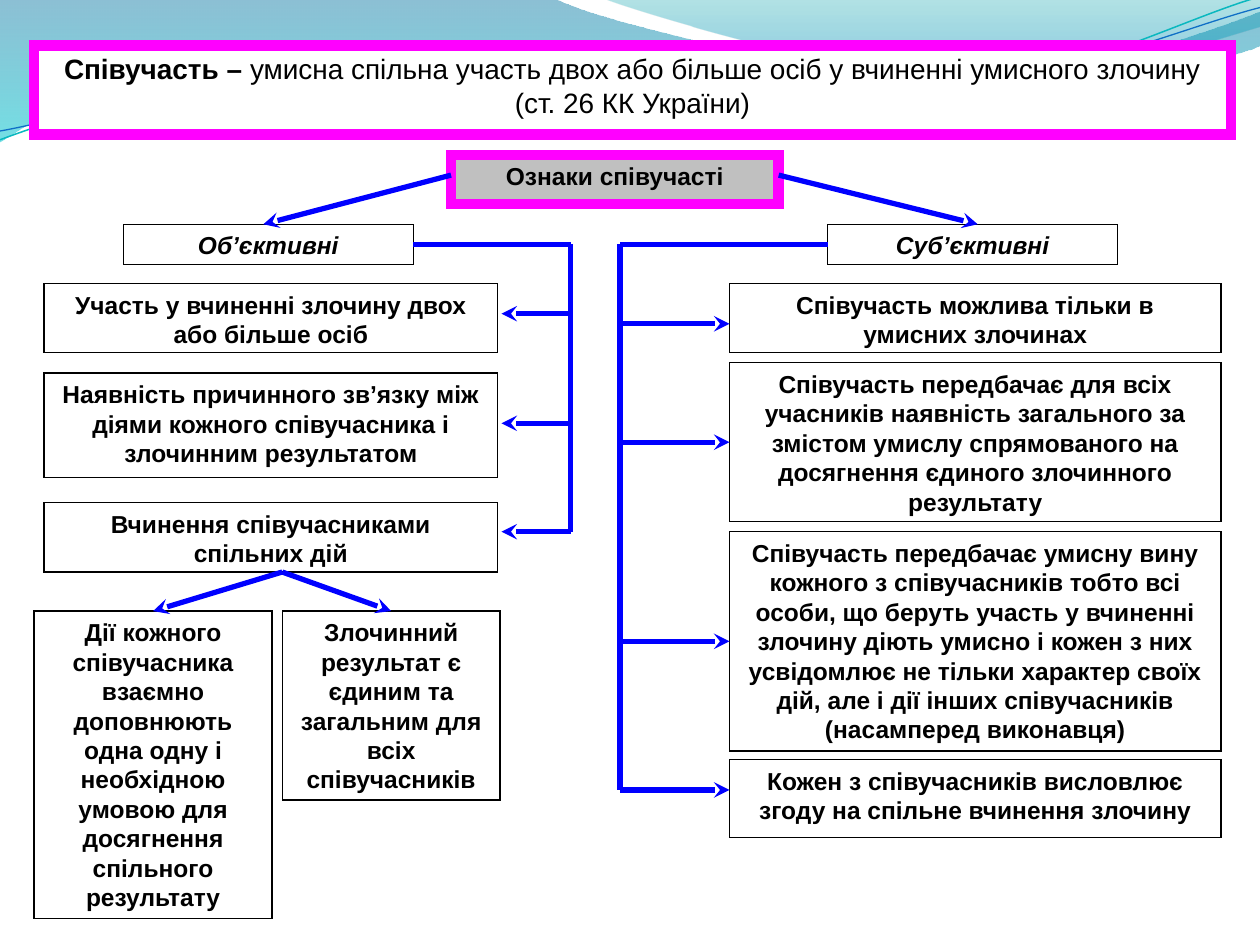
from dataclasses import dataclass
from typing import NamedTuple

from lxml import etree
from pptx import Presentation
from pptx.dml.color import RGBColor
from pptx.enum.shapes import MSO_CONNECTOR, MSO_SHAPE
from pptx.enum.text import MSO_ANCHOR, MSO_AUTO_SIZE, PP_ALIGN
from pptx.oxml.ns import qn
from pptx.util import Inches, Pt

RECTANGLE = MSO_SHAPE.RECTANGLE
STRAIGHT = MSO_CONNECTOR.STRAIGHT
CENTER = PP_ALIGN.CENTER
TOP_ANCHOR = MSO_ANCHOR.TOP
NO_AUTOFIT = MSO_AUTO_SIZE.NONE
TOP, LEFT, BOTTOM, RIGHT = range(4)


@dataclass(frozen=True)
class Theme:
    font: str = "Arial"
    title_size: float = 16
    body_size: float = 14
    thin: float = 0.75
    connector_width: float = 3
    frame_width: float = 6
    text: str = "000000"
    paper: str = "FFFFFF"
    header: str = "C0C0C0"
    frame: str = "FF00FF"
    arrow: str = "0000FF"


class Box(NamedTuple):
    left: float
    top: float
    width: float
    height: float
    text: str
    italic: bool = False
    fill: str = Theme.paper
    line: str = Theme.text
    line_width: float = Theme.thin


class Point(NamedTuple):
    x: float
    y: float


class Joint(NamedTuple):
    shape: object
    site: int


class Stop(NamedTuple):
    position: float
    color: str
    opacity: int


class Wave(NamedTuple):
    segments: list
    stops: tuple = ()
    line: str = ""
    line_width: float = Theme.thin


WAVES = [
    Wave([(0, 0), (4.4, -0.01), (4.76, 0.17, 6.64, 0.63, 7.58, 0.63),
          (8.53, 0.63, 9.58, 0.26, 10, 0.09), (10.01, 0.36),
          (9.83, 0.44, 8.7, 0.76, 7.46, 0.75), (6.22, 0.75, 3.82, 0.28, 2.57, 0.34),
          (1.29, 0.36, 0.46, 0.83, -0.01, 1.13)],
         (Stop(0, "0074A1", 45), Stop(1, "00C6CF", 55))),
    Wave([(4.79, -0.01), (5.09, 0.11, 6.82, 0.62, 7.69, 0.65),
          (8.56, 0.69, 9.61, 0.32, 10, 0.21), (10, 0)],
         (Stop(0, "00A1A9", 30), Stop(0.8, "008BBF", 45))),
    Wave([(0, 1.11), (0.48, 0.93, 1.58, 0.57, 2.77, 0.52),
          (3.95, 0.47, 5.93, 0.89, 7.13, 0.8), (8.33, 0.71, 9.38, 0.15, 9.98, -0.02)],
         line="0AB8BF", line_width=0.85),
    Wave([(0, 1.04), (0.47, 0.96, 1.64, 0.61, 2.83, 0.56),
          (4.03, 0.51, 5.97, 0.84, 7.17, 0.75), (8.36, 0.67, 9.41, 0.21, 10, 0.06)],
         line="0F6FC6"),
]
HEADER = Box(3.58, 1.23, 2.6, 0.39, "Ознаки співучасті", fill=Theme.header,
             line=Theme.frame, line_width=Theme.frame_width)
OBJECTIVE = Box(0.98, 1.78, 2.3, 0.32, "Об’єктивні", italic=True)
SUBJECTIVE = Box(6.57, 1.78, 2.3, 0.32, "Суб’єктивні", italic=True)
OBJECTIVE_SIGNS = [Box(0.35, top, 3.6, height, text) for top, height, text in (
    (2.25, 0.55, "Участь у вчиненні злочину двох або більше осіб"),
    (2.96, 0.83, "Наявність причинного зв’язку між діями кожного співучасника "
                 "і злочинним результатом"),
    (3.99, 0.55, "Вчинення співучасниками спільних дій"),
)]
SUBJECTIVE_SIGNS = [Box(5.79, top, 3.9, height, text) for top, height, text in (
    (2.25, 0.55, "Співучасть можлива тільки в умисних злочинах"),
    (2.88, 1.26, "Співучасть передбачає для всіх учасників наявність загального "
                 "за змістом умислу спрямованого на досягнення єдиного злочинного результату"),
    (4.22, 1.74, "Співучасть передбачає умисну вину кожного з співучасників тобто всі "
                 "особи, що беруть участь у вчиненні злочину діють умисно і кожен з них "
                 "усвідомлює не тільки характер своїх дій, але і дії інших співучасників "
                 "(насамперед виконавця)"),
    (6.03, 0.62, "Кожен з співучасників висловлює згоду на спільне вчинення злочину"),
)]
JOINT_ACTIONS = [
    Box(0.27, 4.85, 1.89, 2.44, "Дії кожного співучасника взаємно доповнюють одна одну "
                                "і необхідною умовою для досягнення спільного результату"),
    Box(2.24, 4.85, 1.73, 1.5, "Злочинний результат є єдиним та загальним для всіх співучасників"),
]


def bend_segments(shape, segments: list) -> None:
    outline = next(shape._element.iter(qn("a:lnTo"))).getparent()
    corners = iter(outline.findall(qn("a:lnTo")))
    for segment in segments[1:]:
        corner = next(corners)
        if len(segment) == 2:
            continue
        corner.tag = qn("a:cubicBezTo")
        for _ in range(2):
            control = next(corners)
            corner.append(control[0])
            outline.remove(control)


def draw_wave(slide, wave: Wave) -> None:
    points = [(Inches(x), Inches(y)) for segment in wave.segments
              for x, y in zip(segment[::2], segment[1::2])]
    builder = slide.shapes.build_freeform(*points[0])
    builder.add_line_segments(points[1:], close=bool(wave.stops))
    shape = builder.convert_to_shape()
    bend_segments(shape, wave.segments)
    shape.shadow.inherit = False
    if not wave.stops:
        shape.fill.background()
        set_line(shape, wave.line, wave.line_width)
        return
    shape.line.fill.background()
    shape.fill.gradient()
    shape.fill.gradient_angle = 270
    for gradient_stop, stop in zip(shape.fill.gradient_stops, wave.stops):
        gradient_stop.position = stop.position
        gradient_stop.color.rgb = RGBColor.from_string(stop.color)
    for color, stop in zip(shape._element.spPr.iter(qn("a:srgbClr")), wave.stops):
        etree.SubElement(color, qn("a:alpha"), val=str(stop.opacity * 1000))


def set_line(shape, color: str, width: float) -> None:
    shape.line.color.rgb = RGBColor.from_string(color)
    shape.line.width = Pt(width)
    outline = shape._element.spPr.find(qn("a:ln"))
    etree.SubElement(outline, qn("a:miter"), lim="800000")


def format_box(shape, fill: str, line: str, line_width: float, size: float):
    shape.fill.solid()
    shape.fill.fore_color.rgb = RGBColor.from_string(fill)
    set_line(shape, line, line_width)
    frame = shape.text_frame
    frame.word_wrap = True
    frame.auto_size = NO_AUTOFIT
    frame.vertical_anchor = TOP_ANCHOR
    paragraph = frame.paragraphs[0]
    paragraph.alignment = CENTER
    paragraph.font.name = Theme.font
    paragraph.font.size = Pt(size)
    paragraph.font.color.rgb = RGBColor.from_string(Theme.text)
    return paragraph


def draw_box(slide, box: Box):
    shape = slide.shapes.add_shape(RECTANGLE, *map(Inches, box[:4]))
    shape.shadow.inherit = False
    paragraph = format_box(shape, box.fill, box.line, box.line_width, Theme.body_size)
    paragraph.text = box.text
    paragraph.font.bold = True
    paragraph.font.italic = box.italic
    return shape


def draw_title(slide) -> None:
    title = slide.shapes.title
    title.left, title.top, title.width, title.height = map(Inches, (0.27, 0.36, 9.5, 0.71))
    paragraph = format_box(title, Theme.paper, Theme.frame, Theme.frame_width, Theme.title_size)
    for text, bold in (("Співучасть – ", True),
                       ("умисна спільна участь двох або більше осіб у вчиненні "
                        "умисного злочину (ст. 26 КК України)", False)):
        run = paragraph.add_run()
        run.text = text
        run.font.bold = bold
    slide.shapes._spTree.append(title._element)


def draw_connector(slide, start: Point | Joint, end: Point | Joint, arrow: bool = True) -> None:
    ends = [(Inches(end.x), Inches(end.y)) if isinstance(end, Point) else (0, 0)
            for end in (start, end)]
    connector = slide.shapes.add_connector(STRAIGHT, *ends[0], *ends[1])
    if isinstance(start, Joint):
        connector.begin_connect(*start)
    if isinstance(end, Joint):
        connector.end_connect(*end)
    set_line(connector, Theme.arrow, Theme.connector_width)
    properties = connector._element.spPr
    if arrow:
        etree.SubElement(properties.find(qn("a:ln")), qn("a:tailEnd"), type="stealth")
    etree.SubElement(properties, qn("a:effectLst"))


def draw_branches(slide, source: Joint, trunk: float, targets: list) -> None:
    top, bottom = 1.94, targets[-1][0]
    draw_connector(slide, source, Point(trunk, top), arrow=False)
    draw_connector(slide, Point(trunk, top), Point(trunk, bottom), arrow=False)
    for y, target in targets:
        draw_connector(slide, Point(trunk, y), target)


def main() -> None:
    presentation = Presentation()
    presentation.slide_width, presentation.slide_height = Inches(10), Inches(7.5)
    slide = presentation.slides.add_slide(presentation.slide_layouts[5])
    for wave in WAVES:
        draw_wave(slide, wave)
    _, objective, subjective = [draw_box(slide, box)
                                for box in (HEADER, OBJECTIVE, SUBJECTIVE)]
    for box in OBJECTIVE_SIGNS:
        draw_box(slide, box)
    actions = [draw_box(slide, box) for box in JOINT_ACTIONS]
    signs = [draw_box(slide, box) for box in SUBJECTIVE_SIGNS]

    draw_connector(slide, Point(3.58, 1.39), Point(2.09, 1.78))
    draw_connector(slide, Point(6.18, 1.39), Point(7.76, 1.78))
    draw_branches(slide, Joint(objective, RIGHT), 4.53,
                  [(y, Point(3.98, y)) for y in (2.49, 3.36, 4.22)])
    for action in actions:
        draw_connector(slide, Point(2.24, 4.54), Joint(action, TOP))
    draw_branches(slide, Joint(subjective, LEFT), 4.92,
                  [(2.57, Point(5.79, 2.57)), (3.51, Joint(signs[1], LEFT)),
                   (5.09, Joint(signs[2], LEFT)), (6.27, Point(5.79, 6.27))])
    draw_title(slide)
    presentation.save("out.pptx")


if __name__ == "__main__":
    main()
